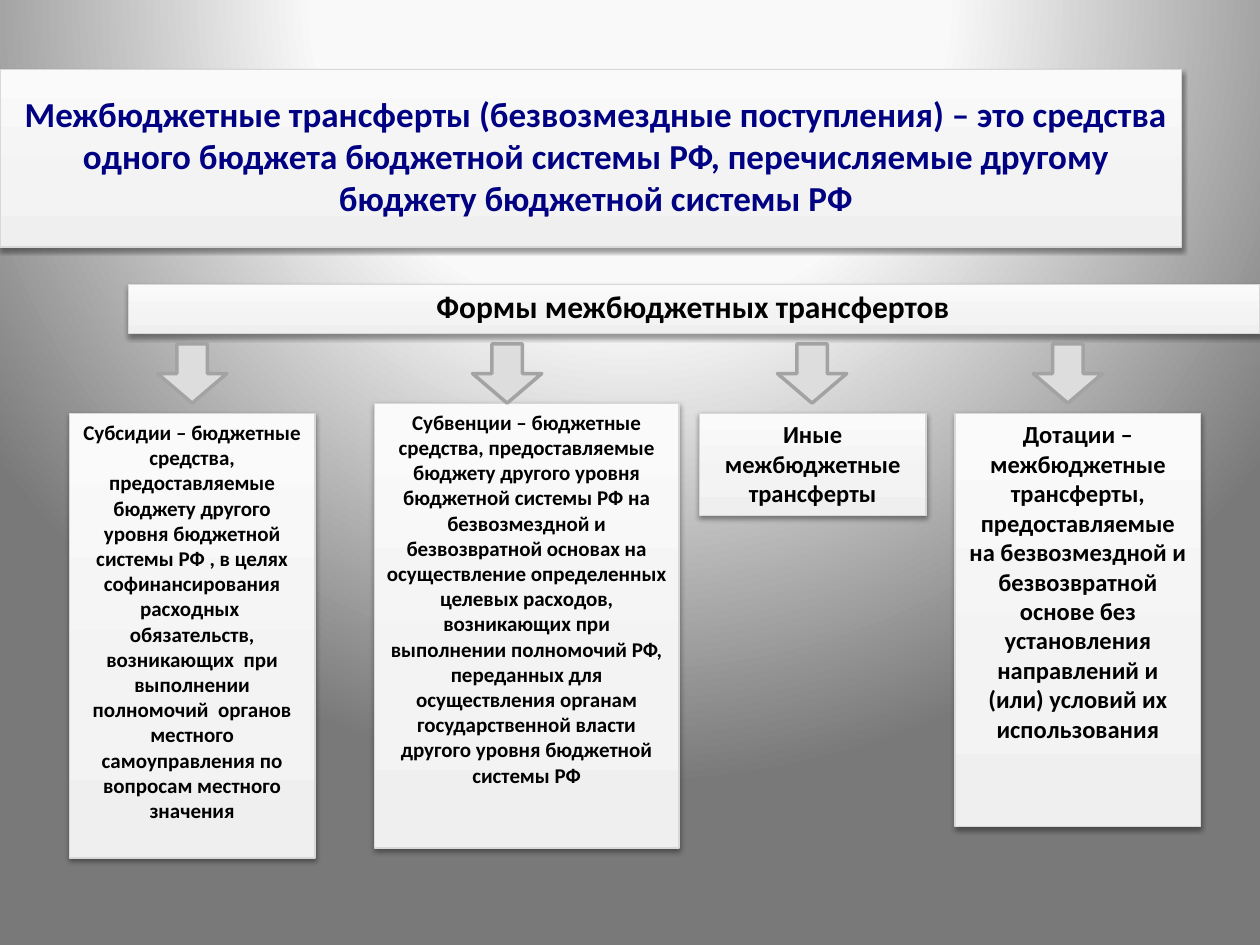
from lxml import etree
from pptx import Presentation
from pptx import util as u
from pptx.dml.color import RGBColor
from pptx.enum import shapes, text
from pptx.oxml import ns

COLUMNS, ROWS = 100, 75
CELL = u.Inches(0.1)

TITLE = ("Межбюджетные трансферты (безвозмездные поступления) – это средства одного "
         "бюджета бюджетной системы РФ, перечисляемые другому бюджету бюджетной системы РФ")
SUBTITLE = "Формы межбюджетных трансфертов"

TRANSFERS = [
    ((5.5, 32.8, 19.5, 35.3), 12.5, 12,
     "Субсидии – бюджетные средства, предоставляемые бюджету другого уровня бюджетной "
     "системы РФ , в целях софинансирования расходных  обязательств, возникающих  при "
     "выполнении полномочий  органов местного самоуправления по вопросам местного значения"),
    ((29.7, 32, 24.2, 35.3), 37.5, 12,
     "Субвенции – бюджетные средства, предоставляемые бюджету другого уровня бюджетной "
     "системы РФ на безвозмездной и безвозвратной основах на осуществление определенных "
     "целевых расходов, возникающих при выполнении полномочий РФ, переданных для "
     "осуществления органам государственной власти другого уровня бюджетной системы РФ"),
    ((55.5, 32.8, 18, 8.1), 61.7, 14,
     "Иные межбюджетные трансферты"),
    ((75.8, 32.8, 19.5, 32.8), 82, 14,
     "Дотации – межбюджетные трансферты, предоставляемые на безвозмездной и безвозвратной "
     "основе без установления направлений и (или) условий их использования"),
]

BACKGROUND_STOPS = [(0, "FBFBFB"), (40, "F9F9F9"), (100, "797979")]
PANEL_STOPS = [(0, "EFEFEF"), (35, "F3F3F3"), (100, "FAFAFA")]


def color(value):
    return RGBColor.from_string(value)


def add_node(parent, tag, **attributes):
    return etree.SubElement(parent, ns.qn(tag), {key: str(value) for key, value in attributes.items()})


def set_gradient(fill, owner, stops):
    fill.gradient()
    gradient = owner.find(".//" + ns.qn("a:gradFill"))
    for child in list(gradient):
        gradient.remove(child)
    stop_list = add_node(gradient, "a:gsLst")
    for position, value in stops:
        stop = add_node(stop_list, "a:gs", pos=position * 1000)
        add_node(stop, "a:srgbClr", val=value)
    return gradient


def paint_background(slide):
    gradient = set_gradient(slide.background.fill, slide.element, BACKGROUND_STOPS)
    route = add_node(gradient, "a:path", path="circle")
    add_node(route, "a:fillToRect", l=50000, t=-80000, r=50000, b=180000)


def add_shadow(shape):
    effects = shape.element.spPr.find(ns.qn("a:effectLst"))
    shadow = add_node(effects, "a:outerShdw", blurRad=u.Pt(3.1), dist=u.Pt(1.6),
                      dir=90 * 60000, rotWithShape=0)
    shadow_color = add_node(shadow, "a:srgbClr", val="000000")
    add_node(shadow_color, "a:alpha", val=38000)


def add_shape(slide, kind, area, line_color, line_width):
    shape = slide.shapes.add_shape(kind, *(round(cells * CELL) for cells in area))
    shape.shadow.inherit = False
    shape.line.color.rgb = color(line_color)
    shape.line.width = u.Pt(line_width)
    return shape


def add_panel(slide, area, words, size, font_color="000000",
              anchor=text.MSO_ANCHOR.TOP, insets=(0.1, 0.05, 0.1, 0.05)):
    panel = add_shape(slide, shapes.MSO_SHAPE.RECTANGLE, area, "D8D8D8", 0.75)
    gradient = set_gradient(panel.fill, panel.element, PANEL_STOPS)
    add_node(gradient, "a:lin", ang=270 * 60000, scaled=0)
    add_shadow(panel)
    frame = panel.text_frame
    frame.word_wrap = True
    frame.vertical_anchor = anchor
    (frame.margin_left, frame.margin_top,
     frame.margin_right, frame.margin_bottom) = map(u.Inches, insets)
    paragraph = frame.paragraphs[0]
    paragraph.text = words
    paragraph.alignment = text.PP_ALIGN.CENTER
    paragraph.font.name = "Calibri"
    paragraph.font.size = u.Pt(size)
    paragraph.font.bold = True
    paragraph.font.color.rgb = color(font_color)
    return paragraph


def add_arrow(slide, column):
    arrow = add_shape(slide, shapes.MSO_SHAPE.DOWN_ARROW, (column, 27.3, 5.5, 4.7), "A3A3A3", 2)
    arrow.fill.solid()
    arrow.fill.fore_color.rgb = color("DDDDDD")
    arrow.adjustments[0] = 0.44
    arrow.adjustments[1] = 0.5


def main():
    presentation = Presentation()
    presentation.slide_width = COLUMNS * CELL
    presentation.slide_height = ROWS * CELL
    slide = presentation.slides.add_slide(presentation.slide_layouts[6])
    paint_background(slide)
    add_panel(slide, (0, 5.5, 93.8, 14.1), TITLE, 20, "000082",
              text.MSO_ANCHOR.MIDDLE, (0.1, 0, 0.02, 0.05))
    subtitle = add_panel(slide, (10.2, 22.6, 89.8, 3.9), SUBTITLE, 18,
                         insets=(0, 0.05, 0.02, 0.05))
    subtitle.line_spacing = 0.9
    subtitle.space_before = u.Pt(3.6)
    for area, arrow_column, size, words in TRANSFERS:
        add_panel(slide, area, words, size)
        add_arrow(slide, arrow_column)
    presentation.save("out.pptx")


if __name__ == "__main__":
    main()
